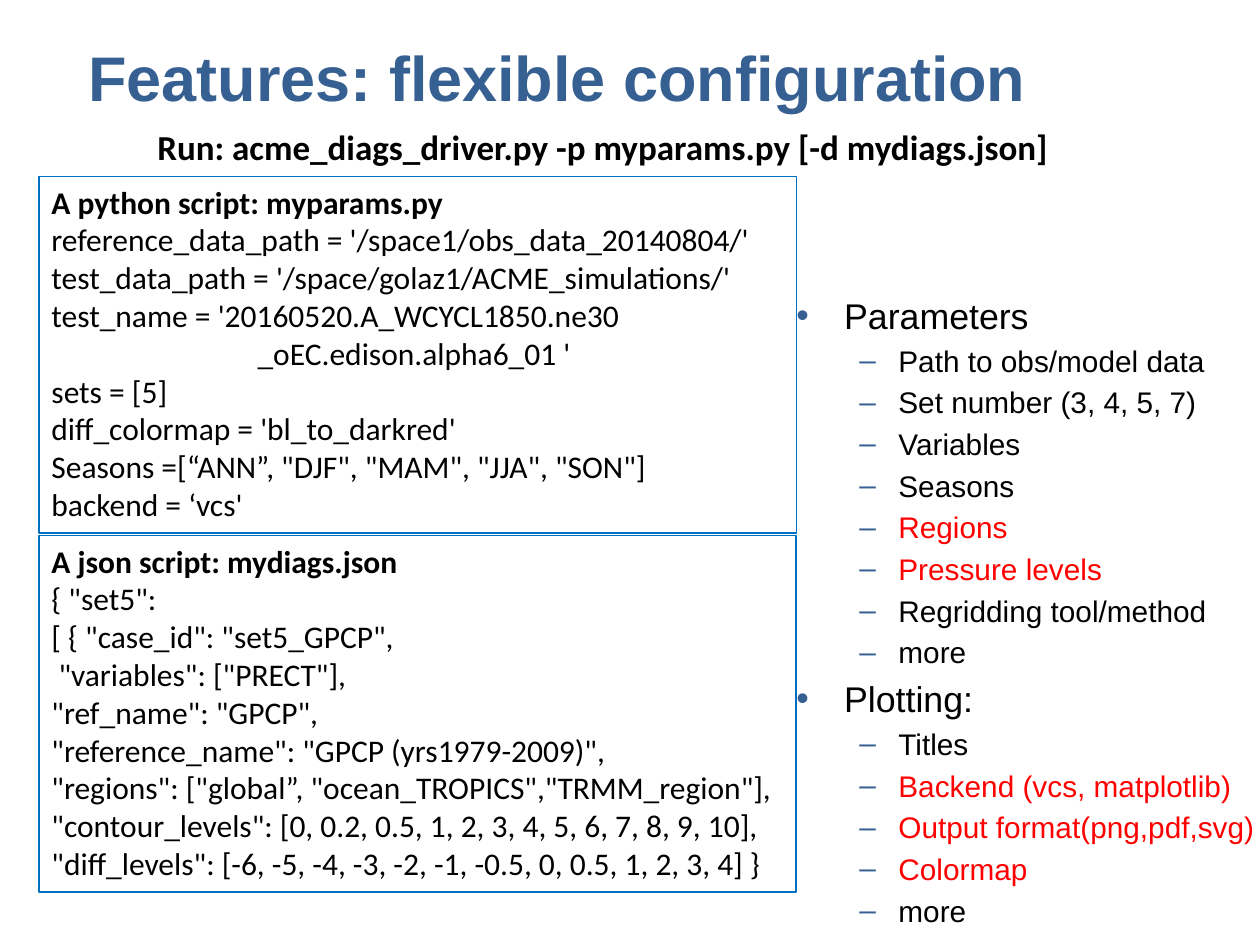
from dataclasses import dataclass
from lxml import etree
from pptx import Presentation
from pptx.dml.color import RGBColor
from pptx.enum.shapes import MSO_SHAPE
from pptx.enum.text import MSO_ANCHOR, MSO_AUTO_SIZE, PP_ALIGN
from pptx.oxml.ns import qn
from pptx.util import Inches, Pt

RECTANGLE = MSO_SHAPE.RECTANGLE
TOP, BOTTOM = MSO_ANCHOR.TOP, MSO_ANCHOR.BOTTOM
GROW, FIXED = MSO_AUTO_SIZE.SHAPE_TO_FIT_TEXT, MSO_AUTO_SIZE.NONE
LEFT, CENTER = PP_ALIGN.LEFT, PP_ALIGN.CENTER

COLORS = {"heading": "376092", "text": "000000", "new": "FF0000",
          "border": "0070C0", "paper": "FFFFFF"}
SLIDE_WIDTH, SLIDE_HEIGHT = Inches(10), Inches(7.5)
COLUMNS, ROWS = 100, 75
MARGINS = ("margin_left", "margin_top", "margin_right", "margin_bottom")


@dataclass
class Area:
    column: float
    row: float
    columns: float
    rows: float

    def lengths(self) -> tuple:
        return (int(SLIDE_WIDTH * self.column / COLUMNS),
                int(SLIDE_HEIGHT * self.row / ROWS),
                int(SLIDE_WIDTH * self.columns / COLUMNS),
                int(SLIDE_HEIGHT * self.rows / ROWS))


@dataclass
class Line:
    text: str
    size: float = 18
    font: str = "Calibri"
    color: str = "text"
    bold: bool = False
    alignment: PP_ALIGN = LEFT


@dataclass
class ScriptBox:
    area: Area
    border: float
    lines: list


@dataclass
class BulletLevel:
    mark: str
    size: float
    margin: float
    hanging: float
    space_before: float


@dataclass
class Topic:
    name: str
    items: list
    new_items: set


LEVELS = [BulletLevel("•", 20.4, 0.38, 0.38, 4.1),
          BulletLevel("–", 17, 0.81, 0.31, 3.4)]

TOPICS = [
    Topic("Parameters",
          ["Path to obs/model data", "Set number (3, 4, 5, 7)", "Variables", "Seasons",
           "Regions", "Pressure levels", "Regridding tool/method", "more"],
          {"Regions", "Pressure levels"}),
    Topic("Plotting:",
          ["Titles", "Backend (vcs, matplotlib)", "Output format(png,pdf,svg)",
           "Colormap", "more"],
          {"Backend (vcs, matplotlib)", "Output format(png,pdf,svg)", "Colormap"}),
]

SCRIPT_BOXES = [
    ScriptBox(Area(3.1, 14, 60.1, 28.3), 0.75, [
        Line("A python script: myparams.py", bold=True),
        Line("reference_data_path = '/space1/obs_data_20140804/'"),
        Line("test_data_path = '/space/golaz1/ACME_simulations/' "
             "test_name = '20160520.A_WCYCL1850.ne30"),
        Line("_oEC.edison.alpha6_01 ' ", alignment=CENTER),
        Line("sets = [5]"),
        Line("diff_colormap = 'bl_to_darkred'"),
        Line('Seasons =[“ANN”, "DJF", "MAM", "JJA", "SON"]'),
        Line("backend = ‘vcs'"),
    ]),
    ScriptBox(Area(3.1, 42.5, 60.1, 28.3), 1, [
        Line("A json script: mydiags.json", bold=True),
        Line('{ "set5":'),
        Line('[ { "case_id": "set5_GPCP",'),
        Line(' "variables": ["PRECT"],'),
        Line('"ref_name": "GPCP",'),
        Line('"reference_name": "GPCP (yrs1979-2009)",'),
        Line('"regions": ["global”, "ocean_TROPICS","TRMM_region"],'),
        Line('"contour_levels": [0, 0.2, 0.5, 1, 2, 3, 4, 5, 6, 7, 8, 9, 10],'),
        Line('"diff_levels": [-6, -5, -4, -3, -2, -1, -0.5, 0, 0.5, 1, 2, 3, 4] }'),
    ]),
]


def rgb(name: str) -> RGBColor:
    return RGBColor.from_string(COLORS[name])


def set_values(target, values: dict) -> None:
    for name, value in values.items():
        setattr(target, name, value)


def write_line(paragraph, line: Line) -> None:
    paragraph.alignment = line.alignment
    run = paragraph.add_run()
    run.text = line.text
    set_values(run.font, {"size": Pt(line.size), "name": line.font, "bold": line.bold})
    run.font.color.rgb = rgb(line.color)


def write_lines(shape, lines: list, anchor=TOP, auto_size=GROW) -> None:
    frame = shape.text_frame
    set_values(frame, {"word_wrap": True, "vertical_anchor": anchor, "auto_size": auto_size})
    for index, line in enumerate(lines):
        write_line(frame.add_paragraph() if index else frame.paragraphs[0], line)


def add_text(slide, area: Area, lines: list, anchor=TOP, auto_size=GROW, flush=False):
    shape = slide.shapes.add_textbox(*area.lengths())
    write_lines(shape, lines, anchor, auto_size)
    if flush:
        set_values(shape.text_frame, dict.fromkeys(MARGINS, 0))
    return shape


def add_script_box(slide, box: ScriptBox) -> None:
    shape = slide.shapes.add_shape(RECTANGLE, *box.area.lengths())
    shape.shadow.inherit = False
    shape.fill.solid()
    shape.fill.fore_color.rgb = rgb("paper")
    shape.line.color.rgb = rgb("border")
    shape.line.width = Pt(box.border)
    write_lines(shape, box.lines)


def add_bullet(paragraph, depth: int, first: bool) -> None:
    level = LEVELS[depth]
    set_values(paragraph, {"level": depth, "line_spacing": 1.0,
                           "space_before": Pt(0 if first else level.space_before)})
    properties = paragraph._p.get_or_add_pPr()
    properties.set("marL", str(Inches(level.margin)))
    properties.set("indent", str(-Inches(level.hanging)))
    color = etree.SubElement(properties, qn("a:buClr"))
    etree.SubElement(color, qn("a:srgbClr"), val=COLORS["heading"])
    etree.SubElement(properties, qn("a:buFont"), typeface="Arial")
    etree.SubElement(properties, qn("a:buChar"), char=level.mark)


def add_topics(slide, area: Area, topics: list) -> None:
    entries = []
    for topic in topics:
        entries.append((0, topic.name, "text"))
        entries += [(1, item, "new" if item in topic.new_items else "text")
                    for item in topic.items]
    lines = [Line(text, LEVELS[depth].size, "Arial", color) for depth, text, color in entries]
    shape = add_text(slide, area, lines, auto_size=FIXED, flush=True)
    for index, paragraph in enumerate(shape.text_frame.paragraphs):
        add_bullet(paragraph, entries[index][0], index == 0)


def main() -> None:
    presentation = Presentation()
    set_values(presentation, {"slide_width": SLIDE_WIDTH, "slide_height": SLIDE_HEIGHT})
    slide = presentation.slides.add_slide(presentation.slide_layouts[6])
    add_text(slide, Area(7, -2.9, 90, 12),
             [Line("Features: flexible configuration", 36, "Arial", "heading", True)],
             BOTTOM, FIXED, True)
    add_topics(slide, Area(63.2, 23.3, 36.8, 51), TOPICS)
    for box in SCRIPT_BOXES:
        add_script_box(slide, box)
    add_text(slide, Area(11.5, 9.5, 76.2, 4.4),
             [Line("Run: acme_diags_driver.py -p myparams.py [-d mydiags.json]", 20, bold=True)])
    presentation.save("out.pptx")


if __name__ == "__main__":
    main()
